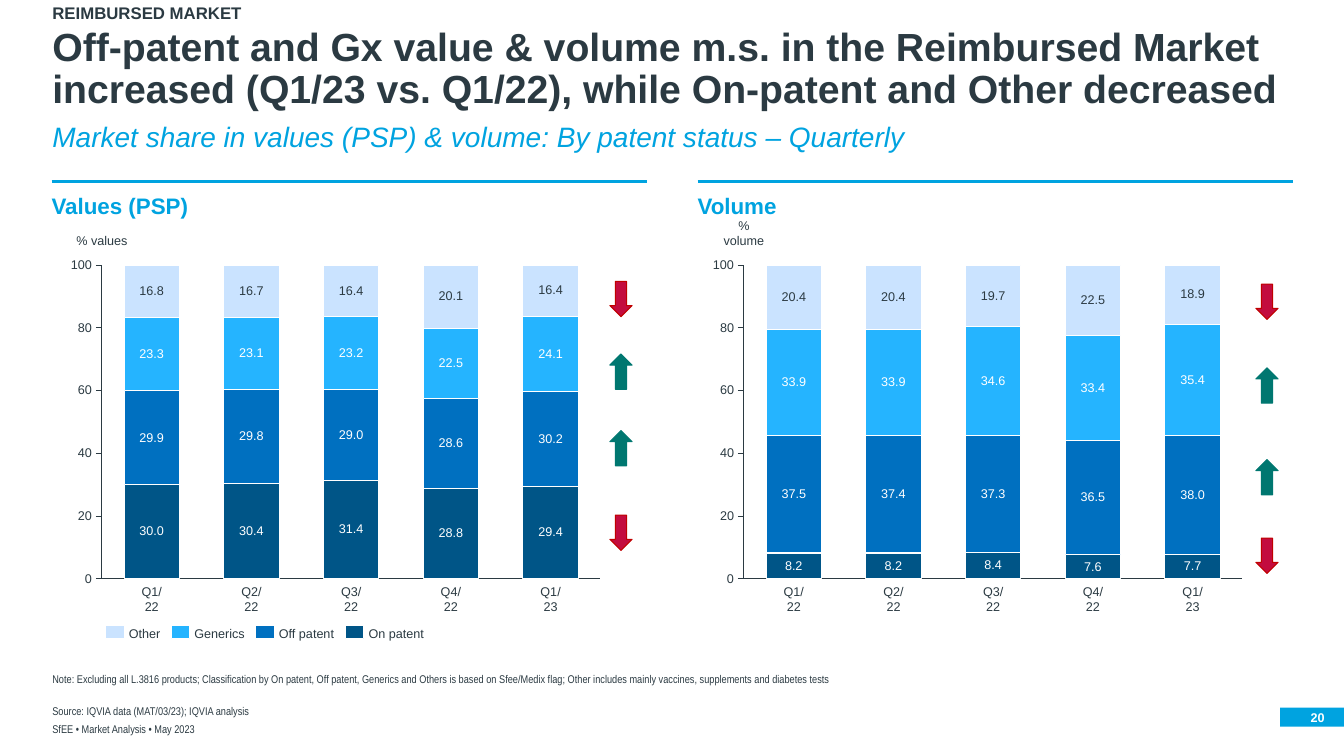
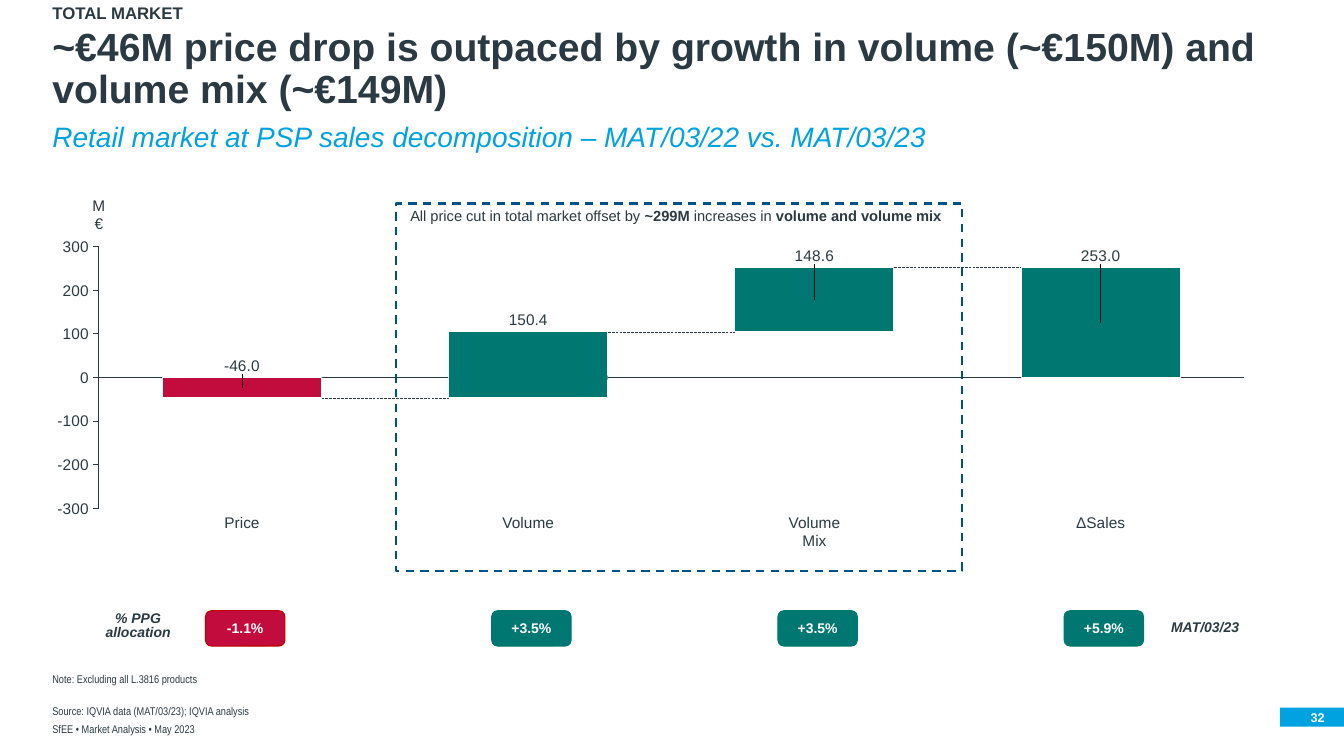
from lxml.etree import SubElement as Sub
from pptx import Presentation
from pptx.chart.data import CategoryChartData as Data
from pptx.dml.color import RGBColor as RGB
from pptx.enum.chart import XL_CHART_TYPE as Kind, XL_TICK_LABEL_POSITION as Tick
from pptx.enum.chart import XL_TICK_MARK as Mark
from pptx.enum.dml import MSO_LINE as Dash
from pptx.enum.shapes import MSO_CONNECTOR as Link, MSO_SHAPE as Form
from pptx.enum.text import MSO_ANCHOR as Anchor, PP_ALIGN as Align
from pptx.oxml import parse_xml
from pptx.oxml.ns import nsdecls, qn
from pptx.util import Cm, Pt

INK, SKY, WHITE = "2B3A42", "00A3E0", "FFFFFF"
TEAL, RED, RIM, NAVY = "007770", "C30C3E", "C00000", "005187"
SHADES = ["005587", "0070C0", "25B4FF", "CAE3FF"]
GAP = 80
LEFT, WIDE = 1.32, 31.24


def hue(code):
    return RGB.from_string(code)


def paint(part, fill=None, line=None, width=0.75):
    if fill:
        part.fill.solid()
        part.fill.fore_color.rgb = hue(fill)
    else:
        part.fill.background()
    if line:
        part.line.color.rgb = hue(line)
        part.line.width = Pt(width)
    else:
        part.line.fill.background()


def write(shape, runs, size, color=INK, bold=False, italic=False, font="Arial",
          align=Align.LEFT, anchor=Anchor.TOP, space=None, wrap=True):
    """Fill a shape with text; runs is a string or a list of (text, bold)."""
    frame = shape.text_frame
    frame.margin_left = frame.margin_right = 0
    frame.margin_top = frame.margin_bottom = 0
    frame.word_wrap, frame.vertical_anchor = wrap, anchor
    para = frame.paragraphs[0]
    para.alignment = align
    if space:
        para.line_spacing = space
    for words, heavy in [(runs, bold)] if isinstance(runs, str) else runs:
        for num, line in enumerate(words.split("\n")):
            if num:
                para.add_line_break()
            run = para.add_run()
            run.text = line
            face = run.font
            face.name, face.size = font, Pt(size)
            face.bold, face.italic = heavy, italic
            face.color.rgb = hue(color)


def text(slide, box, runs, size, **style):
    write(slide.shapes.add_textbox(*map(Cm, box)), runs, size, **style)


def label(slide, mid, top, width, high, words, size, **style):
    text(slide, (mid - width / 2, top, width, high), words, size,
         align=Align.CENTER, wrap=False, **style)


def block(slide, form, box, fill=None, line=None, width=0.75):
    shape = slide.shapes.add_shape(form, *map(Cm, box))
    shape.shadow.inherit = False
    paint(shape, fill, line, width)
    return shape


def rule(slide, ends, color, width, dash=None):
    line = slide.shapes.add_connector(Link.STRAIGHT, *map(Cm, ends))
    line.line.color.rgb = hue(color)
    line.line.width = Pt(width)
    if dash:
        line.line.dash_style = dash
    Sub(line._element.spPr, qn("a:effectLst"))


# Parts that every slide shares
def page(deck, num, kicker, title, sub, note):
    slide = deck.slides.add_slide(deck.slide_layouts[6])
    block(slide, Form.RECTANGLE, (32.26, 17.83, 1.61, 0.48), SKY)
    text(slide, (32.26, 17.83, 1.12, 0.48), num, 9, color=WHITE, bold=True,
         align=Align.RIGHT, anchor=Anchor.MIDDLE)
    text(slide, (LEFT, 0.13, WIDE, 0.46), kicker, 12, bold=True, space=0.9)
    text(slide, (LEFT, 0.66, 32.4, 2.16), title, 28, bold=True, space=0.9,
         anchor=Anchor.BOTTOM)
    text(slide, (LEFT, 3.12, WIDE, 0.76), sub, 20, color=SKY, italic=True,
         space=0.9)
    small = [(16.99, WIDE, note),
             (17.78, 21, "Source: IQVIA data (MAT/03/23); IQVIA analysis"),
             (18.24, 21, "SfEE • Market Analysis • May 2023")]
    for top, width, words in small:
        text(slide, (LEFT, top, width, 0.3), words, 8, font="Arial Narrow",
             anchor=Anchor.BOTTOM, space=0.9)
    return slide


# Stacked columns with a fixed inner plot area
def stack(slide, box, rows, colors, plot, scale, size):
    data = Data(number_format="0.0")
    data.categories = [str(i + 1) for i in range(len(rows[0]))]
    for num, row in enumerate(rows, 1):
        data.add_series(f"Series {num}", row)
    chart = slide.shapes.add_chart(Kind.COLUMN_STACKED, *map(Cm, box), data).chart
    chart.has_legend = chart.has_title = False
    chart.font.name, chart.font.size = "Arial", Pt(size)
    chart.font.color.rgb = hue(INK)
    bars = chart.plots[0]
    bars.gap_width, bars.overlap, bars.vary_by_categories = GAP, 100, False
    for row, color in zip(bars.series, colors):
        paint(row.format, color, WHITE)
        row.invert_if_negative = False

    cat, val = chart.category_axis, chart.value_axis
    cat.tick_label_position = Tick.NONE
    cat.major_tick_mark = Mark.NONE
    val.major_tick_mark = Mark.OUTSIDE
    val.has_major_gridlines = False
    val.minimum_scale, val.maximum_scale, val.major_unit = scale
    val.tick_labels.number_format = '#,##0;"-"#,##0'
    val.tick_labels.number_format_is_linked = False
    for axis in (cat, val):
        axis.format.line.color.rgb = hue(INK)
        axis.format.line.width = Pt(0.75)

    area = chart._chartSpace.chart.plotArea
    for old in area.findall(qn("c:layout")):
        area.remove(old)
    area.insert(0, layout(zip("xywh", plot), "inner"))
    return bars


def layout(pairs, target=None):
    root = parse_xml(f"<c:layout {nsdecls('c')}><c:manualLayout/></c:layout>")
    if target:
        Sub(root[0], qn("c:layoutTarget")).set("val", target)
        for key in "xy":
            Sub(root[0], qn(f"c:{key}Mode")).set("val", "edge")
    for key, val in pairs:
        Sub(root[0], qn(f"c:{key}")).set("val", str(val))
    return root


# One market-share panel: heading, chart, quarters and trend arrows
def panel(slide, box, shift, head, unit, rows, tops):
    left, top, width = box
    rule(slide, (left, top, left + width, top), SKY, 2.25)
    text(slide, (left, top + 0.26, width, 0.69), head, 16, color=SKY, bold=True)
    x, y, w, h = left + shift, top + 1.86, 13.9, 8.41
    plot = (0.079, 0.03, 0.904, 0.94)
    bars = stack(slide, (x, y, w, h), rows, SHADES, plot, (0, 100, 20), 9)
    for row, color in zip(bars.series, [WHITE] * 3 + [INK]):
        tags = row.data_labels
        tags.show_value = True
        tags.font.size, tags.font.name = Pt(9), "Arial"
        tags.font.color.rgb = hue(color)
    axis, step = x + plot[0] * w, plot[2] * w / 5
    label(slide, axis, top + 1.3, 1.35, 0.38, unit, 9, anchor=Anchor.BOTTOM)
    for num, name in enumerate(["Q1/\n22", "Q2/\n22", "Q3/\n22", "Q4/\n22", "Q1/\n23"]):
        label(slide, axis + step * (num + 0.5), y + 8.28, 0.56, 0.76, name, 9)
    for place, rise in zip(tops, (False, True, True, False)):
        form = Form.UP_ARROW if rise else Form.DOWN_ARROW
        block(slide, form, (left + 14.07, top + place, 0.56, 0.89),
              TEAL if rise else RED, TEAL if rise else RIM)


def legend(slide, left, top):
    names = ["Other", "Generics", "Off patent", "On patent"]
    for name, x, color in zip(names, (0, 1.65, 3.78, 6.04), SHADES[::-1]):
        block(slide, Form.RECTANGLE, (left + x, top, 0.46, 0.33), color, WHITE)
        text(slide, (left + x + 0.58, top, 1.4, 0.38), name, 9,
             anchor=Anchor.MIDDLE, wrap=False)


def share(deck):
    slide = page(
        deck, "20", "REIMBURSED MARKET",
        "Off-patent and Gx value & volume m.s. in the Reimbursed Market "
        "increased (Q1/23 vs. Q1/22), while On-patent and Other decreased",
        "Market share in values (PSP) & volume: By patent status – Quarterly",
        "Note: Excluding all L.3816 products; Classification by On patent, Off patent, "
        "Generics and Others is based on Sfee/Medix flag; Other includes mainly "
        "vaccines, supplements and diabetes tests")
    panel(slide, (1.3, 4.57, 15), 0.17, "Values (PSP)", "% values",
          [(30.0, 30.4, 31.4, 28.8, 29.4), (29.9, 29.8, 29.0, 28.6, 30.2),
           (23.3, 23.1, 23.2, 22.5, 24.1), (16.8, 16.7, 16.4, 20.1, 16.4)],
          (2.52, 4.35, 6.28, 8.41))
    panel(slide, (17.58, 4.57, 15), 0.07, "Volume", "% volume",
          [(8.2, 8.2, 8.4, 7.6, 7.7), (37.5, 37.4, 37.3, 36.5, 38.0),
           (33.9, 33.9, 34.6, 33.4, 35.4), (20.4, 20.4, 19.7, 22.5, 18.9)],
          (2.59, 4.7, 7.01, 8.99))
    legend(slide, 2.67, 15.77)


# Waterfall of the sales change
def falls(slide, box):
    x, y, w, h = box
    plot = (0.046, 0.041, 0.946, 0.918)
    axis, step = x + plot[0] * w, plot[2] * w / 4
    half = step / (1 + GAP / 100) / 2
    mids = [axis + step * (num + 0.5) for num in range(4)]

    def level(val):
        return y + h * (plot[1] + plot[3] * (300 - val) / 600)

    for num, val in enumerate((-46, 104.4, 253)):
        rule(slide, (mids[num] + half, level(val), mids[num + 1] - half, level(val)),
             INK, 0.25, Dash.LONG_DASH)
    rows = [(-46.0, 104.4, 104.4, 253.0), (None, -46.0, 148.6, None)]
    bars = stack(slide, box, rows, [TEAL, TEAL], plot, (-300, 300, 100), 11)
    base, extra = bars.series
    paint(base.points[0].format, RED, WHITE)
    paint(base.points[2].format)
    # Values lifted above their bars
    for row, num, lift in ((base, 0, -0.077), (base, 3, -0.235), (extra, 2, -0.154)):
        tag = row.points[num].data_label
        tag.font.size, tag.font.name = Pt(11), "Arial"
        tag.font.color.rgb = hue(INK)
        row.data_labels.show_value = False
        for item in row.data_labels._element.findall(qn("c:dLbl")):
            if item.find(qn("c:idx")).get("val") == str(num):
                item.insert(1, layout([("x", 0), ("y", lift)]))
    # Hide the seam where the volume bar crosses zero
    block(slide, Form.RECTANGLE, (mids[1] - half, level(0) - 0.05, 2 * half, 0.1), TEAL)
    label(slide, mids[1], level(104.4) - 0.54, 1.09, 0.46, "150.4", 11,
          anchor=Anchor.BOTTOM)
    label(slide, axis, y - 0.51, 0.53, 0.46, "M€", 11, anchor=Anchor.BOTTOM)
    for mid, name in zip(mids, ("Price", "Volume", "Volume\nMix", "ΔSales")):
        label(slide, mid, y + 7.01, 1.35, 0.46, name, 11)
    return mids


# Row of growth pills under the columns
def pills(slide, mids, top):
    style = dict(bold=True, anchor=Anchor.MIDDLE)
    label(slide, 3.48, top - 0.1, 1.88, 0.99, "% PPG\nallocation", 10,
          italic=True, space=0.85, **style)
    for mid, words in zip(mids, ("-1.1%", "+3.5%", "+3.5%", "+5.9%")):
        drop = words.startswith("-")
        pill = block(slide, Form.ROUNDED_RECTANGLE, (mid - 0.92, top, 2, 0.89),
                     RED if drop else TEAL, RIM if drop else TEAL)
        write(pill, words, 10, color=WHITE, align=Align.CENTER, **style)
    label(slide, 30.37, top, 2.01, 0.89, "MAT/03/23", 10, italic=True,
          space=0.85, **style)


def drivers(deck):
    slide = page(
        deck, "32", "TOTAL MARKET",
        "~€46M price drop is outpaced by growth in volume (~€150M) and "
        "volume mix (~€149M)",
        "Retail market at PSP sales decomposition – MAT/03/22 vs. MAT/03/23",
        "Note: Excluding all L.3816 products")
    mids = falls(slide, (1.09, 5.92, 30.5, 7.19))
    pills(slide, mids, 15.39)
    frame = block(slide, Form.RECTANGLE, (9.98, 5.13, 14.27, 9.25), None, NAVY, 1.5)
    frame.line.dash_style = Dash.DASH
    text(slide, (10.19, 5.21, 13.69, 0.46),
         [("All price cut in total market offset by", False), (" ~299M ", True),
          ("increases in ", False), ("volume and volume mix", True)],
         10.5, align=Align.CENTER)


def main():
    deck = Presentation()
    deck.slide_width, deck.slide_height = Cm(33.87), Cm(19.05)
    share(deck)
    drivers(deck)
    deck.save("out.pptx")


if __name__ == "__main__":
    main()
